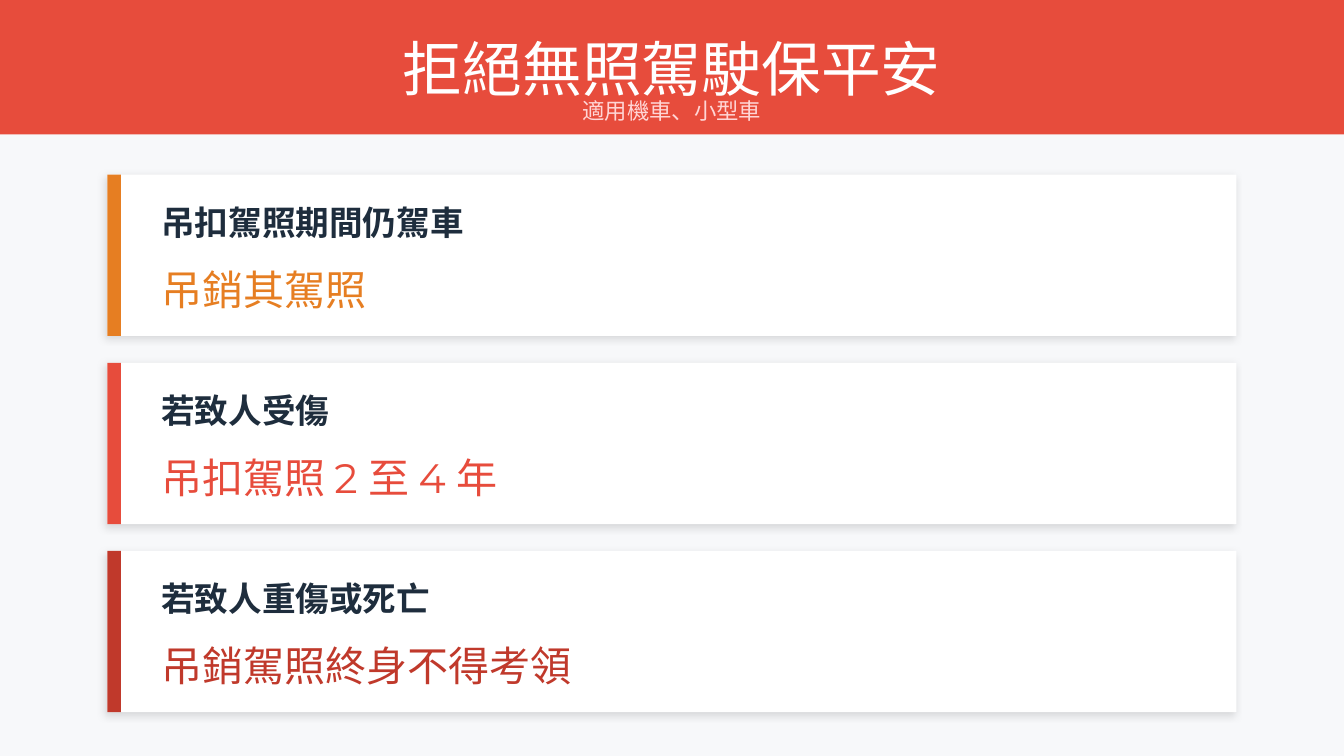
from lxml import etree
from pptx import Presentation
from pptx.dml.color import RGBColor
from pptx.enum import shapes, text
from pptx.oxml import ns
from pptx.util import Inches, Pt

RED = RGBColor(0xE7, 0x4C, 0x3C)
ORANGE = RGBColor(0xE6, 0x7E, 0x22)
DARK_RED = RGBColor(0xC0, 0x39, 0x2B)
PINK = RGBColor(0xFF, 0xD5, 0xD5)
NAVY = RGBColor(0x1E, 0x2D, 0x3D)
WHITE = RGBColor(0xFF, 0xFF, 0xFF)
PALE = RGBColor(0xF7, 0xF8, 0xFA)

TITLE = "拒絕無照駕駛保平安"
SUBTITLE = "適用機車、小型車"
CARDS = [
    ("吊扣駕照期間仍駕車", "吊銷其駕照", ORANGE),
    ("若致人受傷", "吊扣駕照 2 至 4 年", RED),
    ("若致人重傷或死亡", "吊銷駕照終身不得考領", DARK_RED),
]

WIDTH = 10
HEIGHT = WIDTH * 9 / 16
MARGIN, CARD_TOP, CARD_H, CARD_GAP = 0.8, 1.3, 1.2, 0.2
STRIPE_W, INDENT, PAD, ROW_H = 0.1, 0.4, 0.1, 0.5
HEADING, BODY = "Montserrat", "Arial"


def add_rect(s, x, y, w, h, color):
    sp = s.shapes.add_shape(shapes.MSO_SHAPE.RECTANGLE,
                            Inches(x), Inches(y), Inches(w), Inches(h))
    sp.shadow.inherit = False
    sp.fill.solid()
    sp.fill.fore_color.rgb = color
    sp.line.fill.background()
    return sp


def add_soft_shadow(sp):
    """Cast a 12% black shadow towards the lower left."""
    effects = sp.element.spPr.find(ns.qn("a:effectLst"))
    outer = etree.SubElement(effects, ns.qn("a:outerShdw"), blurRad=str(Pt(4)),
                             dist=str(Pt(2)), dir=str(135 * 60000),
                             algn="bl", rotWithShape="0")
    black = etree.SubElement(outer, ns.qn("a:srgbClr"), val="000000")
    etree.SubElement(black, ns.qn("a:alpha"), val="12000")


def set_text(sp, content, size, font, color, bold=False,
             align=text.PP_ALIGN.LEFT):
    tf = sp.text_frame
    tf.word_wrap = True
    tf.auto_size = text.MSO_AUTO_SIZE.NONE
    tf.vertical_anchor = text.MSO_ANCHOR.MIDDLE
    tf.margin_left = tf.margin_right = tf.margin_top = tf.margin_bottom = 0
    p = tf.paragraphs[0]
    p.alignment = align
    r = p.add_run()
    r.text = content
    r.font.size, r.font.name, r.font.bold = Pt(size), font, bold
    r.font.color.rgb = color


def add_text(s, x, y, w, h, content, **style):
    box = s.shapes.add_textbox(Inches(x), Inches(y), Inches(w), Inches(h))
    set_text(box, content, **style)


def add_header(s):
    add_rect(s, 0, 0, WIDTH, 1, RED)
    title = s.shapes.title
    title.left, title.top = Inches(0.5), Inches(0.1)
    title.width, title.height = Inches(WIDTH - 1), Inches(0.8)
    set_text(title, TITLE, size=32, font=HEADING, color=WHITE,
             align=text.PP_ALIGN.CENTER)
    s.shapes.element.append(title.element)  # bring in front of the band
    add_text(s, 0.5, 0.65, WIDTH - 1, 0.35, SUBTITLE, size=12, font=BODY,
             color=PINK, align=text.PP_ALIGN.CENTER)


def add_card(s, y, offence, penalty, color):
    add_soft_shadow(add_rect(s, MARGIN, y, WIDTH - 2 * MARGIN, CARD_H, WHITE))
    add_rect(s, MARGIN, y, STRIPE_W, CARD_H, color)
    x = MARGIN + INDENT
    add_text(s, x, y + PAD, 4, ROW_H, offence,
             size=18, font=BODY, color=NAVY, bold=True)
    add_text(s, x, y + PAD + ROW_H, 7.5, ROW_H, penalty,
             size=22, font=HEADING, color=color)


def main():
    prs = Presentation()
    prs.slide_width, prs.slide_height = Inches(WIDTH), Inches(HEIGHT)
    s = prs.slides.add_slide(prs.slide_layouts.get_by_name("Title Only"))
    s.background.fill.solid()
    s.background.fill.fore_color.rgb = PALE
    add_header(s)
    for i, card in enumerate(CARDS):
        add_card(s, CARD_TOP + i * (CARD_H + CARD_GAP), *card)
    prs.save("out.pptx")


if __name__ == "__main__":
    main()
